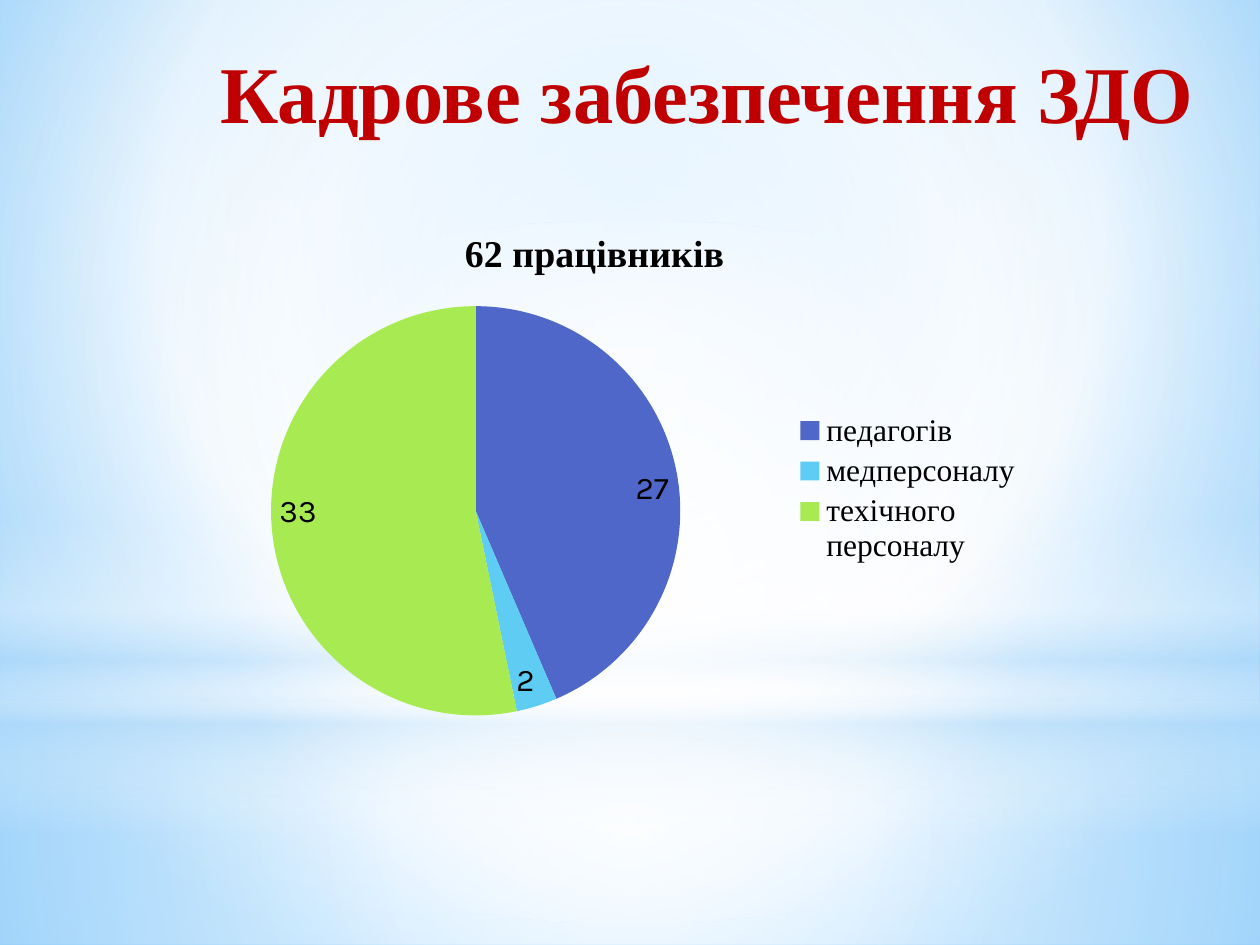
from lxml import etree
from pptx import Presentation
from pptx.chart import data
from pptx.dml import color
from pptx.enum import chart as charts, shapes, text
from pptx.oxml import parse_xml
from pptx.oxml.ns import nsdecls, qn
from pptx.util import Cm, Pt

SERIF = "Times New Roman"
CENTER = (50, 50, 50, 50)


def rgb(value):
    return color.RGBColor.from_string(value)


def apply_gradient(properties, stops, focus=None):
    gradient = parse_xml(f'<a:gradFill {nsdecls("a")} rotWithShape="1"><a:gsLst/></a:gradFill>')
    for position, value, opacity in stops:
        stop = etree.SubElement(gradient[0], qn("a:gs"), pos=str(position * 1000))
        tint = etree.SubElement(stop, qn("a:srgbClr"), val=value)
        if opacity < 100:
            etree.SubElement(tint, qn("a:alpha"), val=str(opacity * 1000))
    if focus:
        path = etree.SubElement(gradient, qn("a:path"), path="circle")
        sides = {side: str(share * 1000) for side, share in zip("ltrb", focus)}
        etree.SubElement(path, qn("a:fillToRect"), sides)
    else:
        etree.SubElement(gradient, qn("a:lin"), ang="5400000", scaled="0")
    solid = properties.find(qn("a:solidFill"))
    properties.replace(solid, gradient)


presentation = Presentation()
presentation.slide_width, presentation.slide_height = Cm(25.4), Cm(19.05)
slide = presentation.slides.add_slide(presentation.slide_layouts[6])

slide.background.fill.solid()
apply_gradient(
    slide.element.find(".//" + qn("p:bgPr")),
    [(0, "9ED5FF", 100), (60, "FFFFFF", 100), (100, "5BB9FF", 100)],
    (20, 10, 20, 60),
)

RECTANGLE, OVAL = shapes.MSO_SHAPE.RECTANGLE, shapes.MSO_SHAPE.OVAL
glows = [
    (RECTANGLE, 14.17, 4.88, CENTER,
     [(0, "FFFFFF", 91), (37, "FFFFFF", 76), (100, "B4DCFA", 79)]),
    (RECTANGLE, 0, 14.17, CENTER,
     [(0, "FFFFFF", 89), (48, "FFFFFF", 62), (100, "B4DCFA", 79)]),
    (RECTANGLE, 10.46, 6.35, None,
     [(0, "FFFFFF", 0), (29, "FFFFFF", 30), (45, "B4DCFA", 40),
      (55, "FFFFFF", 26), (65, "B4DCFA", 60), (100, "FFFFFF", 0)]),
    (OVAL, 4.45, 14.17, CENTER, [(0, "FFFFFF", 100), (56, "FFFFFF", 0)]),
]
for kind, top, height, focus, stops in glows:
    shape = slide.shapes.add_shape(kind, 0, Cm(top), presentation.slide_width, Cm(height))
    shape.shadow.inherit = False
    shape.line.fill.background()
    shape.fill.solid()
    apply_gradient(shape.element.spPr, stops, focus)

title = slide.shapes.add_textbox(Cm(2.31), Cm(0.74), Cm(22), Cm(3.81))
title.text_frame.word_wrap = True
paragraph = title.text_frame.paragraphs[0]
paragraph.text = "Кадрове забезпечення ЗДО"
paragraph.alignment = text.PP_ALIGN.RIGHT

staff = data.CategoryChartData()
staff.categories = ["педагогів", "медперсоналу", "техічного персоналу"]
staff.add_series("62 працівників", [27, 2, 33])
chart = slide.shapes.add_chart(
    charts.XL_CHART_TYPE.PIE, Cm(3.1), Cm(4.11), Cm(17.78), Cm(11.46), staff
).chart
chart.has_title = True
chart.chart_title.include_in_layout = False
heading = chart.chart_title.text_frame.paragraphs[0]
heading.text = "62 працівників"
chart.has_legend = True
chart.legend.position = charts.XL_LEGEND_POSITION.RIGHT
chart.legend.include_in_layout = False

plot = chart.plots[0]
plot.vary_by_categories = True
for index, value in enumerate(["4E67C8", "5ECCF3", "A7EA52"]):
    fill = plot.series[0].points[index].format.fill
    fill.solid()
    fill.fore_color.rgb = rgb(value)
plot.has_data_labels = True
plot.data_labels.show_value = True
plot.data_labels.show_percentage = False
plot.data_labels.position = charts.XL_LABEL_POSITION.INSIDE_END

area = chart.element.find(".//" + qn("c:plotArea"))
for old in area.findall(qn("c:layout")):
    area.remove(old)
layout = etree.Element(qn("c:layout"))
manual = etree.SubElement(layout, qn("c:manualLayout"))
placement = {"layoutTarget": "inner", "xMode": "edge", "yMode": "edge",
             "x": 0.13, "y": 0.18, "w": 0.47, "h": 0.72}
for name, value in placement.items():
    etree.SubElement(manual, qn("c:" + name), val=str(value))
area.insert(0, layout)

formats = [
    (paragraph.runs[0].font, "C00000", {"name": SERIF, "size": Pt(46), "bold": True}),
    (chart.font, "000000", {"name": "Karla", "size": Pt(18)}),
    (heading.runs[0].font, "000000", {"name": SERIF, "size": Pt(21.6), "bold": True}),
    (chart.legend.font, "000000", {"name": SERIF, "size": Pt(18)}),
    (plot.data_labels.font, "000000", {"name": "Karla", "size": Pt(18)}),
]
for font, value, settings in formats:
    font.color.rgb = rgb(value)
    for name, setting in settings.items():
        setattr(font, name, setting)

presentation.save("out.pptx")
